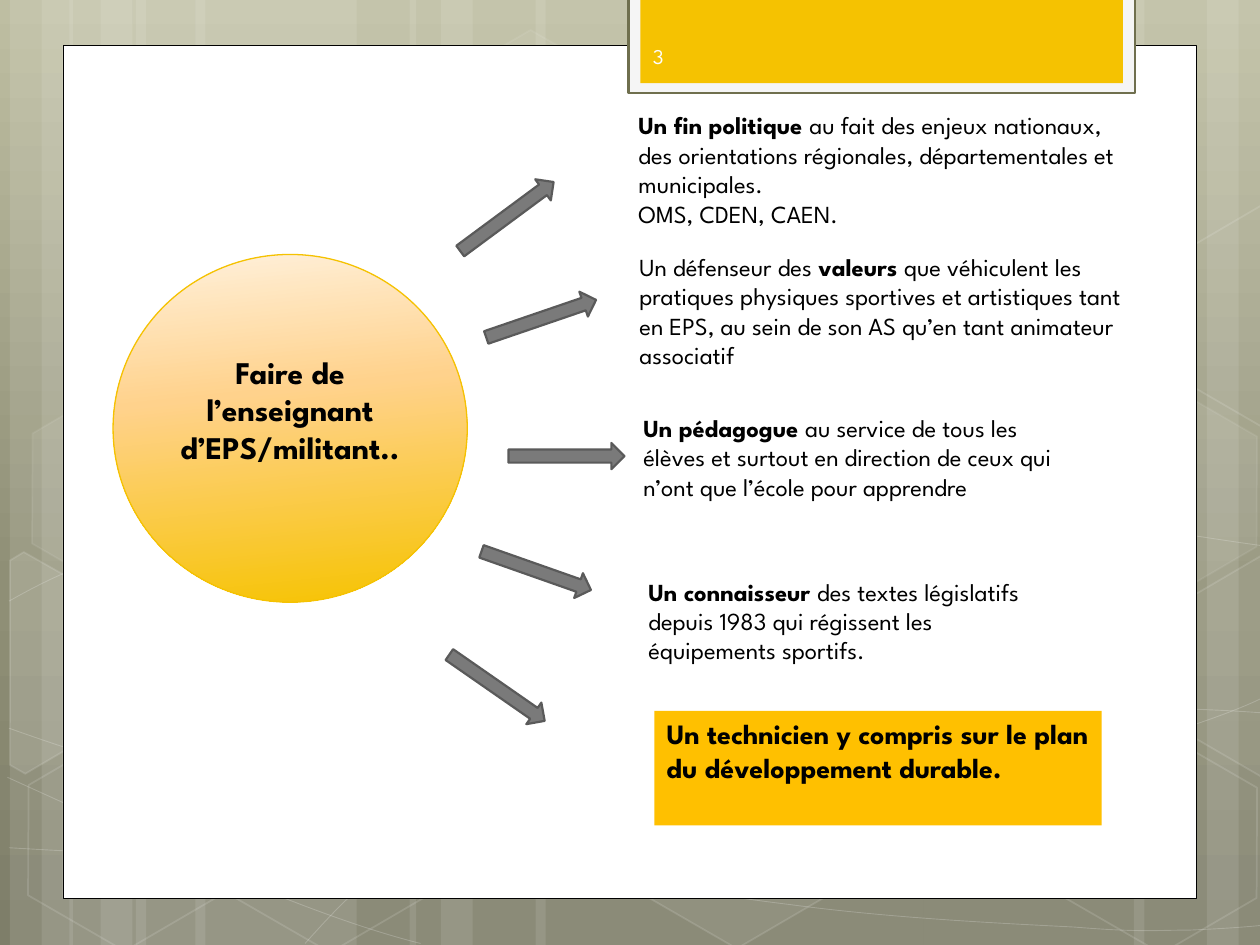
from dataclasses import dataclass
from math import cos, radians, sin

from lxml import etree
from pptx import Presentation
from pptx.dml.color import RGBColor
from pptx.enum.shapes import MSO_SHAPE
from pptx.enum.text import MSO_ANCHOR, PP_ALIGN
from pptx.oxml.ns import qn
from pptx.util import Cm, Pt

RECTANGLE, OVAL = MSO_SHAPE.RECTANGLE, MSO_SHAPE.OVAL
HEXAGON, RIGHT_ARROW = MSO_SHAPE.HEXAGON, MSO_SHAPE.RIGHT_ARROW
TOP, MIDDLE = MSO_ANCHOR.TOP, MSO_ANCHOR.MIDDLE
LEFT, CENTER = PP_ALIGN.LEFT, PP_ALIGN.CENTER
TILT = 30


@dataclass(frozen=True)
class Theme:
    font: str = "League Spartan"
    white: str = "FFFFFF"
    black: str = "000000"
    number: str = "FEFEFE"
    gold: str = "F5C201"
    amber: str = "FFC000"
    tab: str = "F5F5F5"
    tab_line: str = "6F6F4E"
    arrow: str = "7A7A7A"
    arrow_line: str = "5A5A5A"
    backdrop: tuple = ((0, "BEBEA2"), (62, "8F8F76"), (100, "7E7E69"))
    circle: tuple = ((0, "FFF1DC"), (40, "FFD28C"), (100, "F6C300"))
    number_size: int = 12
    body_size: int = 14
    highlight_size: int = 16
    circle_size: int = 18


THEME = Theme()

STRIPES = [(2.74, 4.45), (0.2, 1.27), (0.84, 2.11), (3.94, 4.45), (1.4, 1.27), (2.03, 2.11),
           (18.62, 4.45), (24.33, 1.27), (22.86, 2.11), (10.8, 7.82), (8.26, 1.27), (8.89, 2.11)]

# Each curve is a start point followed by three Bézier points per segment.
CURVES = [
    [(0.18, 17.09), (1.55, 17.17), (2.92, 17.25), (4.83, 17.22), (6.73, 17.2), (9.09, 17.15),
     (11.63, 16.89), (14.17, 16.64), (17.78, 16.15), (20.12, 15.67), (22.43, 15.19),
     (24.82, 14.43), (25.58, 14)],
    [(0.18, 12.12), (0.91, 11.71), (1.65, 11.33), (3.07, 10.95), (4.52, 10.52), (6.58, 10.01),
     (8.81, 9.83), (11.07, 9.65), (13.82, 9.63), (16.61, 9.83), (19.41, 10.03),
     (24.05, 10.82), (25.58, 11.02)],
    [(0.15, 15.67), (3.23, 17.07), (6.27, 18.47), (8.48, 19.02)],
    [(0.18, 14.68), (0.97, 14.96), (1.78, 15.24), (3.25, 15.65), (4.72, 16.03), (6.93, 16.66),
     (9.07, 17.09), (11.18, 17.53), (13.84, 17.98), (15.95, 18.24), (18.06, 18.52),
     (20.32, 18.62), (21.67, 18.69), (22.99, 18.8), (23.34, 18.75), (24, 18.75),
     (24.66, 18.72), (25.12, 18.69), (25.58, 18.64)],
    [(6.15, 19.02), (6.6, 18.52), (7.06, 18.01), (7.67, 17.55), (8.28, 17.09), (9.14, 16.59),
     (9.86, 16.23), (10.57, 15.88), (11, 15.72), (11.94, 15.47), (12.85, 15.21),
     (14.55, 14.86), (15.44, 14.68), (16.36, 14.5), (16.48, 14.5), (17.27, 14.45),
     (18.06, 14.38), (19.3, 14.3), (20.17, 14.27), (22.5, 14.25), (24.21, 14.27), (25.55, 14.38)],
]

# Left, top, fill opacity and line opacity in percent.
HEXAGONS = [(8.48, 0.91, 4, 8), (12.62, 14.96, 6, 12), (0.28, 15.01, 0, 12), (0.36, 7.92, 7, 8),
            (4.42, 15.04, 0, 12), (19.13, 11.51, 10, 12), (21.18, 15.06, 0, 12),
            (21.18, 7.98, 7, 8)]
LEFT_EDGE = [(0.2, 11.3), (0.48, 11.13), (2.44, 12.24), (2.41, 14.48), (0.51, 15.6), (0.2, 15.42)]
RIGHT_EDGE = [(23.52, 12.32), (25.43, 11.2), (25.63, 11.33), (25.63, 15.57), (25.45, 15.67),
              (23.52, 14.55)]
RIGHT_EDGE_UPPER = [(x, y - 7.06) for x, y in RIGHT_EDGE]

# Left, top and rotation, relative to the fan of arrows.
ARROWS = [(0.2, 0, -36.5), (0.89, 2.06, -18.9), (1.4, 4.83, 0), (0.79, 7.14, 19.4), (0, 9.5, 34.8)]

# Box relative to the column, then paragraphs of (text, bold) runs.
ROLES = [
    ((0, 0, 10.44, 2.64),
     [[("Un fin politique ", True),
       ("au fait des enjeux nationaux, des orientations régionales, départementales et "
        "municipales.", False)],
      [("OMS, CDEN, CAEN.", False)]]),
    ((0.02, 2.85, 10.41, 2.64),
     [[("Un défenseur des ", False), ("valeurs ", True),
       ("que véhiculent les pratiques physiques sportives et artistiques tant en EPS, "
        "au sein de son AS qu’en tant animateur associatif", False)]]),
    ((0.1, 6.1, 9.4, 2.64),
     [[("Un pédagogue ", True),
       ("au service de tous les élèves et surtout en direction de ceux qui n’ont que "
        "l’école pour apprendre", False)]]),
    ((0.2, 9.4, 8.81, 2.06),
     [[("Un connaisseur ", True),
       ("des textes législatifs depuis 1983 qui régissent les équipements sportifs.", False)]]),
]


def set_alpha(element, percent):
    for color in element.iter(qn("a:srgbClr")):
        etree.SubElement(color, qn("a:alpha")).set("val", str(percent * 1000))


def set_gradient(fill, element, stops, angle):
    """Fill with (percent, colour) stops; element is the XML that holds the fill."""
    fill.gradient()
    fill.gradient_angle = 360 - angle
    stop_list = next(element.iter(qn("a:gsLst")))
    for child in list(stop_list):
        stop_list.remove(child)
    for position, color in stops:
        stop = etree.SubElement(stop_list, qn("a:gs"), pos=str(position * 1000))
        etree.SubElement(stop, qn("a:srgbClr"), val=color)


def paint(shape, fill=None, line=None, width=1, fill_alpha=None, line_alpha=None):
    shape.shadow.inherit = False
    if fill:
        shape.fill.solid()
        shape.fill.fore_color.rgb = RGBColor.from_string(fill)
        if fill_alpha:
            set_alpha(shape.element.spPr.find(qn("a:solidFill")), fill_alpha)
    else:
        shape.fill.background()
    if line:
        shape.line.color.rgb = RGBColor.from_string(line)
        shape.line.width = Pt(width)
        if line_alpha:
            set_alpha(shape.element.spPr.find(qn("a:ln")), line_alpha)
    else:
        shape.line.fill.background()


def add_preset(parent, kind, box, **style):
    shape = parent.shapes.add_shape(kind, *map(Cm, box))
    paint(shape, **style)
    return shape


def add_outline(parent, points, close, **style):
    start, *others = [(Cm(x), Cm(y)) for x, y in points]
    builder = parent.shapes.build_freeform(*start)
    builder.add_line_segments(others, close=close)
    shape = builder.convert_to_shape()
    paint(shape, **style)
    return shape


def add_curve(parent, points, **style):
    """Draw a chain of cubic Bézier segments."""
    shape = add_outline(parent, points, False, **style)
    outline = next(shape.element.iter(qn("a:path")))
    lines = outline.findall(qn("a:lnTo"))
    for first in range(0, len(lines), 3):
        curve = etree.SubElement(outline, qn("a:cubicBezTo"))
        for line in lines[first:first + 3]:
            curve.append(line[0])
            outline.remove(line)


def turn(point, degrees):
    x, y = point
    cosine, sine = cos(radians(degrees)), sin(radians(degrees))
    return x * cosine - y * sine, x * sine + y * cosine


def add_tilted_outline(parent, points, **style):
    """Draw a closed outline in a frame tilted like the hexagons."""
    upright = [turn(point, -TILT) for point in points]
    center = [(min(values) + max(values)) / 2 for values in zip(*upright)]
    shift = [after - before for after, before in zip(turn(center, TILT), center)]
    placed = [(x + shift[0], y + shift[1]) for x, y in upright]
    add_outline(parent, placed, True, **style).rotation = TILT


def write(shape, paragraphs, size, color=THEME.black, align=LEFT, anchor=TOP):
    frame = shape.text_frame
    frame.word_wrap = True
    frame.vertical_anchor = anchor
    for index, runs in enumerate(paragraphs):
        paragraph = frame.add_paragraph() if index else frame.paragraphs[0]
        paragraph.alignment = align
        for text, bold in runs:
            run = paragraph.add_run()
            run.text = text
            run.font.name = THEME.font
            run.font.size = Pt(size)
            run.font.bold = bold
            run.font.color.rgb = RGBColor.from_string(color)


def add_backdrop(slide, height):
    set_gradient(slide.background.fill, slide.element, THEME.backdrop, 90)
    group = slide.shapes.add_group_shape()
    for left, width in STRIPES:
        add_preset(group, RECTANGLE, (left, 0, width, height), fill=THEME.white, fill_alpha=10)
    for curve in CURVES:
        add_curve(group, curve, line=THEME.white, width=0.5, line_alpha=20)
    for left, top, fill_alpha, line_alpha in HEXAGONS:
        hexagon = add_preset(group, HEXAGON, (left, top, 4.45, 3.86),
                             fill=THEME.white if fill_alpha else None, fill_alpha=fill_alpha,
                             line=THEME.white, line_alpha=line_alpha)
        hexagon.adjustments[0] = 0.285
        hexagon.rotation = TILT
    for points, fill_alpha in ((LEFT_EDGE, 10), (RIGHT_EDGE, 4), (RIGHT_EDGE_UPPER, 0)):
        add_tilted_outline(group, points, fill=THEME.white if fill_alpha else None,
                           fill_alpha=fill_alpha, line=THEME.white, line_alpha=12)


def add_number_tab(slide, left, top, width, height):
    add_preset(slide, RECTANGLE, (left, top, width, height),
               fill=THEME.tab, line=THEME.tab_line, width=1.25)
    margin = 0.24
    add_preset(slide, RECTANGLE, (left + margin, top, width - 2 * margin, height - 0.2),
               fill=THEME.gold)
    number = slide.shapes.add_textbox(Cm(left + margin), Cm(top + 0.67), Cm(3.71), Cm(1.02))
    write(number, [[("3", False)]], THEME.number_size, THEME.number, anchor=MIDDLE)


def add_circle(slide, *box):
    circle = add_preset(slide, OVAL, box, line=THEME.gold, width=0.75)
    set_gradient(circle.fill, circle.element, THEME.circle, 84)
    write(circle, [[("Faire de l’enseignant d’EPS/militant..", True)]],
          THEME.circle_size, align=CENTER, anchor=MIDDLE)
    circle.text_frame.margin_bottom = Cm(0.89)


def add_arrow_fan(slide, left, top):
    for x, y, rotation in ARROWS:
        arrow = add_preset(slide, RIGHT_ARROW, (left + x, top + y, 2.34, 0.53),
                           fill=THEME.arrow, line=THEME.arrow_line, width=1.25)
        arrow.rotation = rotation


def add_roles(slide, left, top):
    for (x, y, width, height), paragraphs in ROLES:
        role = slide.shapes.add_textbox(Cm(left + x), Cm(top + y), Cm(width), Cm(height))
        write(role, paragraphs, THEME.body_size)


def add_highlight(slide, *box):
    highlight = add_preset(slide, RECTANGLE, box, fill=THEME.amber)
    write(highlight, [[("Un technicien y compris sur le plan du développement durable.", True)]],
          THEME.highlight_size)


def main():
    presentation = Presentation()
    presentation.slide_width, presentation.slide_height = Cm(25.4), Cm(19.05)
    slide = presentation.slides.add_slide(presentation.slide_layouts[6])
    add_backdrop(slide, 19.05)
    add_preset(slide, RECTANGLE, (1.27, 0.91, 22.86, 17.2),
               fill=THEME.white, line=THEME.black, width=0.5)
    add_number_tab(slide, 12.67, -0.05, 10.21, 1.93)
    add_circle(slide, 2.28, 5.13, 7.14, 7.01)
    add_arrow_fan(slide, 8.85, 4.1)
    add_roles(slide, 12.62, 2.1)
    add_highlight(slide, 13.19, 14.33, 9.02, 2.31)
    presentation.save("out.pptx")


if __name__ == "__main__":
    main()
